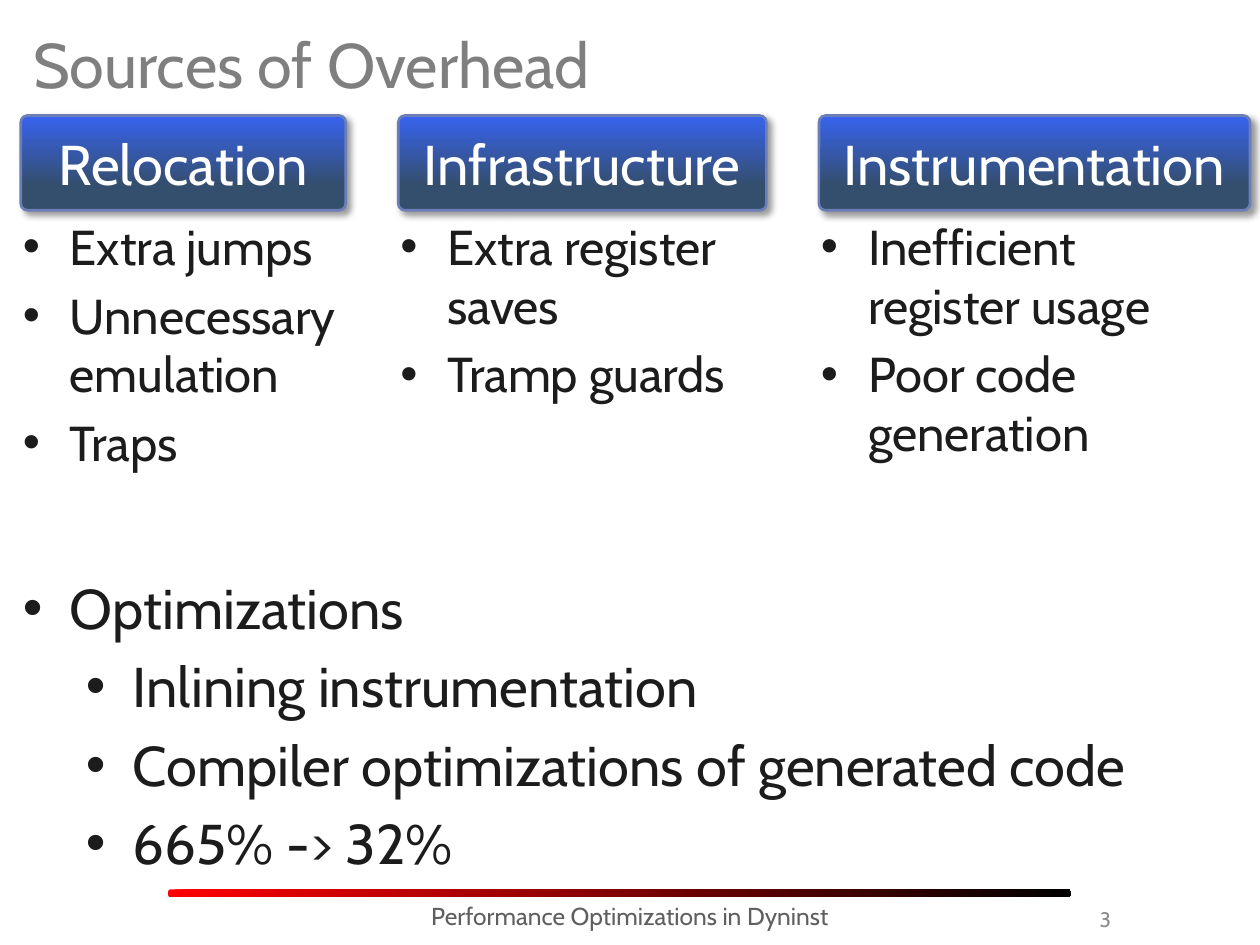
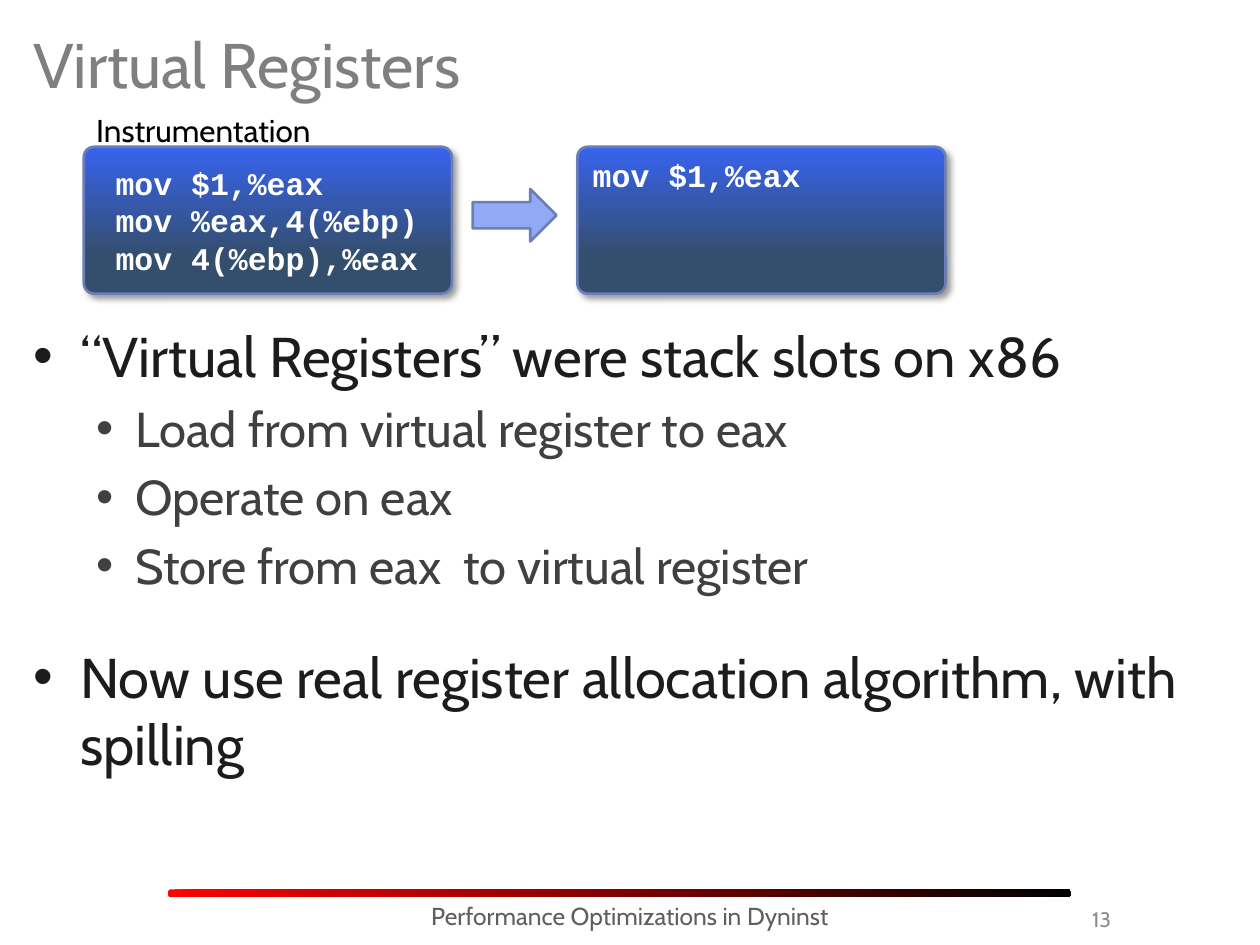
from lxml import etree
from pptx import Presentation
from pptx.dml.color import RGBColor
from pptx.enum import shapes, text
from pptx.oxml import ns
from pptx.util import Cm, Pt

# Content: column heading, heading width, list width, list items
OVERHEAD_TITLE = "Sources of Overhead"
OVERHEAD_COLUMNS = [
    ("Relocation", 6.55, 7.82, ["Extra jumps", "Unnecessary emulation", "Traps"]),
    ("Infrastructure", 7.42, 7.82, ["Extra register saves", "Tramp guards"]),
    ("Instrumentation", 8.69, 8.69, ["Inefficient register usage", "Poor code generation"]),
]
# Bullets: text, style name
OPTIMIZATIONS = [
    ("Optimizations", "main"),
    ("Inlining instrumentation", "wide"),
    ("Compiler optimizations of generated code", "wide"),
    ("665% -> 32%", "wide"),
]
REGISTERS_TITLE = "Virtual Registers"
CODE_LABEL = "Instrumentation"
CODE_BEFORE = ["mov $1,%eax", "mov %eax,4(%ebp)", "mov 4(%ebp),%eax"]
CODE_AFTER = ["mov $1,%eax"]
REGISTER_POINTS = [
    ("“Virtual Registers” were stack slots on x86", "main"),
    ("Load from virtual register to eax", "sub"),
    ("Operate on eax", "sub"),
    ("Store from eax  to virtual register", "sub"),
    ("Now use real register allocation algorithm, with spilling", "section"),
]
FOOTER = "Performance Optimizations in Dyninst"

# Colours and fonts
WHITE = RGBColor(0xFF, 0xFF, 0xFF)
BLACK = RGBColor(0, 0, 0)
RED = RGBColor(0xFF, 0, 0)
INK = RGBColor(0x1C, 0x1C, 0x1C)
SUB_INK = RGBColor(0x40, 0x40, 0x40)
TITLE_GREY = RGBColor(0x7F, 0x7F, 0x7F)
FOOTER_GREY = RGBColor(0x5F, 0x5F, 0x5F)
NUMBER_GREY = RGBColor(0x8C, 0x8C, 0x8C)
BOX_TOP = RGBColor(0x37, 0x63, 0xEF)
BOX_BOTTOM = RGBColor(0x34, 0x4E, 0x6D)
BOX_LINE = RGBColor(0x6C, 0x7E, 0xB6)
ARROW_BLUE = RGBColor(0x92, 0xAA, 0xF6)
SANS, MONO = "Cabin", "Courier New"

# Bullet styles: size, colour, level, left margin, hanging indent, space before
BULLETS = {
    "column": (28, INK, 0, 0.95, 0.95, 5.6),
    "main": (32, INK, 0, 0.95, 0.95, 6.4),
    "wide": (32, INK, 1, 2.22, 0.95, 6.4),
    "sub": (28, SUB_INK, 1, 2.06, 0.79, 5.6),
    "section": (32, INK, 0, 0.95, 0.95, 27.5),
}
LEFT, CENTER, RIGHT = text.PP_ALIGN.LEFT, text.PP_ALIGN.CENTER, text.PP_ALIGN.RIGHT
TOP, MIDDLE = text.MSO_ANCHOR.TOP, text.MSO_ANCHOR.MIDDLE
ROUNDED, ARROW = shapes.MSO_SHAPE.ROUNDED_RECTANGLE, shapes.MSO_SHAPE.RIGHT_ARROW


def lengths(box):
    return [Cm(value) for value in box]


def set_font(paragraph, size, color, name=SANS, bold=False):
    for key, value in dict(size=Pt(size), name=name, bold=bold).items():
        setattr(paragraph.font, key, value)
    paragraph.font.color.rgb = color


def write(shape, lines, size, color, align=LEFT, anchor=TOP, name=SANS, bold=False):
    frame = shape.text_frame
    frame.word_wrap = True
    frame.vertical_anchor = anchor
    frame.text = "\n".join(lines)
    for paragraph in frame.paragraphs:
        paragraph.alignment = align
        set_font(paragraph, size, color, name, bold)


def add_text(slide, box, line, *style, **options):
    write(slide.shapes.add_textbox(*lengths(box)), [line], *style, **options)


def add_bullets(slide, box, items):
    frame = slide.shapes.add_textbox(*lengths(box)).text_frame
    frame.word_wrap = True
    for index, (line, style) in enumerate(items):
        size, color, level, margin, hanging, space = BULLETS[style]
        paragraph = frame.add_paragraph() if index else frame.paragraphs[0]
        paragraph.text = line
        paragraph.level = level
        properties = paragraph._p.get_or_add_pPr()
        properties.set("marL", str(Cm(margin)))
        properties.set("indent", str(-Cm(hanging)))
        for tag, key, value in (("a:buFont", "typeface", "Arial"), ("a:buChar", "char", "•")):
            etree.SubElement(properties, ns.qn(tag)).set(key, value)
        paragraph.space_before = Pt(space if index else 0)
        set_font(paragraph, size, color)


def add_shape(slide, kind, box):
    shape = slide.shapes.add_shape(kind, *lengths(box))
    shape.shadow.inherit = False
    return shape


def set_gradient(shape, angle, *stops):
    shape.fill.gradient()
    shape.fill.gradient_angle = angle
    for stop, (position, color) in zip(shape.fill.gradient_stops, stops):
        stop.position = position
        stop.color.rgb = color


def set_outline(shape):
    shape.line.color.rgb = BOX_LINE
    shape.line.width = Pt(1.5)


def add_shadow(shape):
    effects = shape._element.spPr.find(ns.qn("a:effectLst"))
    shadow = etree.SubElement(effects, ns.qn("a:outerShdw"))
    for key, value in dict(blurRad=Pt(4), dist=Pt(3), dir=45 * 60000, rotWithShape=0).items():
        shadow.set(key, str(value))
    color = etree.SubElement(shadow, ns.qn("a:srgbClr"), val=str(BLACK))
    etree.SubElement(color, ns.qn("a:alpha"), val="40000")


def add_blue_box(slide, box):
    shape = add_shape(slide, ROUNDED, box)
    shape.adjustments[0] = 0.07
    set_gradient(shape, 270, (0, BOX_TOP), (0.74, BOX_BOTTOM))
    set_outline(shape)
    add_shadow(shape)
    return shape


def add_slide(presentation, title, number):
    """Blank slide with the shared title, gradient rule and footer."""
    slide = presentation.slides.add_slide(presentation.slide_layouts[6])
    rule = add_shape(slide, ROUNDED, (3.39, 17.93, 18.2, 0.16))
    rule.adjustments[0] = 0.33
    set_gradient(rule, 0, (0, RED), (1, BLACK))
    rule.line.fill.background()
    add_text(slide, (0.42, 0.21, 24.55, 2.12), title, 36, TITLE_GREY, anchor=MIDDLE)
    add_text(slide, (19.26, 17.99, 3.39, 1.06), str(number), 12, NUMBER_GREY, RIGHT, MIDDLE)
    add_text(slide, (6.14, 18.03, 13.12, 1.02), FOOTER, 14, FOOTER_GREY, CENTER)
    return slide


def build_overhead(presentation):
    slide = add_slide(presentation, OVERHEAD_TITLE, 3)
    left, top, height, gap = 0.42, 2.33, 1.91, 1.06
    for heading, width, list_width, items in OVERHEAD_COLUMNS:
        box = add_blue_box(slide, (left, top, width, height))
        write(box, [heading], 32, WHITE, CENTER, MIDDLE)
        add_bullets(slide, (left - 0.21, top + height, list_width, 6.14),
                    [(item, "column") for item in items])
        left += width + gap
    add_bullets(slide, (0.21, 11.43, 25.19, 6.35), OPTIMIZATIONS)


def build_registers(presentation):
    slide = add_slide(presentation, REGISTERS_TITLE, 13)
    add_bullets(slide, (0.42, 6.35, 24.34, 11.43), REGISTER_POINTS)

    # Code before and after, joined by an arrow
    for left, inset, anchor, code in ((1.69, 0.58, MIDDLE, CODE_BEFORE),
                                      (11.64, 0.25, TOP, CODE_AFTER)):
        box = add_blue_box(slide, (left, 2.96, 7.42, 2.96))
        box.text_frame.margin_left = Cm(inset)
        write(box, code, 18, WHITE, anchor=anchor, name=MONO, bold=True)
    arrow = add_shape(slide, ARROW, (9.53, 3.81, 1.69, 1.06))
    arrow.fill.solid()
    arrow.fill.fore_color.rgb = ARROW_BLUE
    set_outline(arrow)
    add_text(slide, (1.69, 2.12, 5.93, 1.02), CODE_LABEL, 18, BLACK)


def main():
    presentation = Presentation()
    presentation.slide_width, presentation.slide_height = Cm(25.4), Cm(19.05)
    build_overhead(presentation)
    build_registers(presentation)
    presentation.save("out.pptx")


if __name__ == "__main__":
    main()
